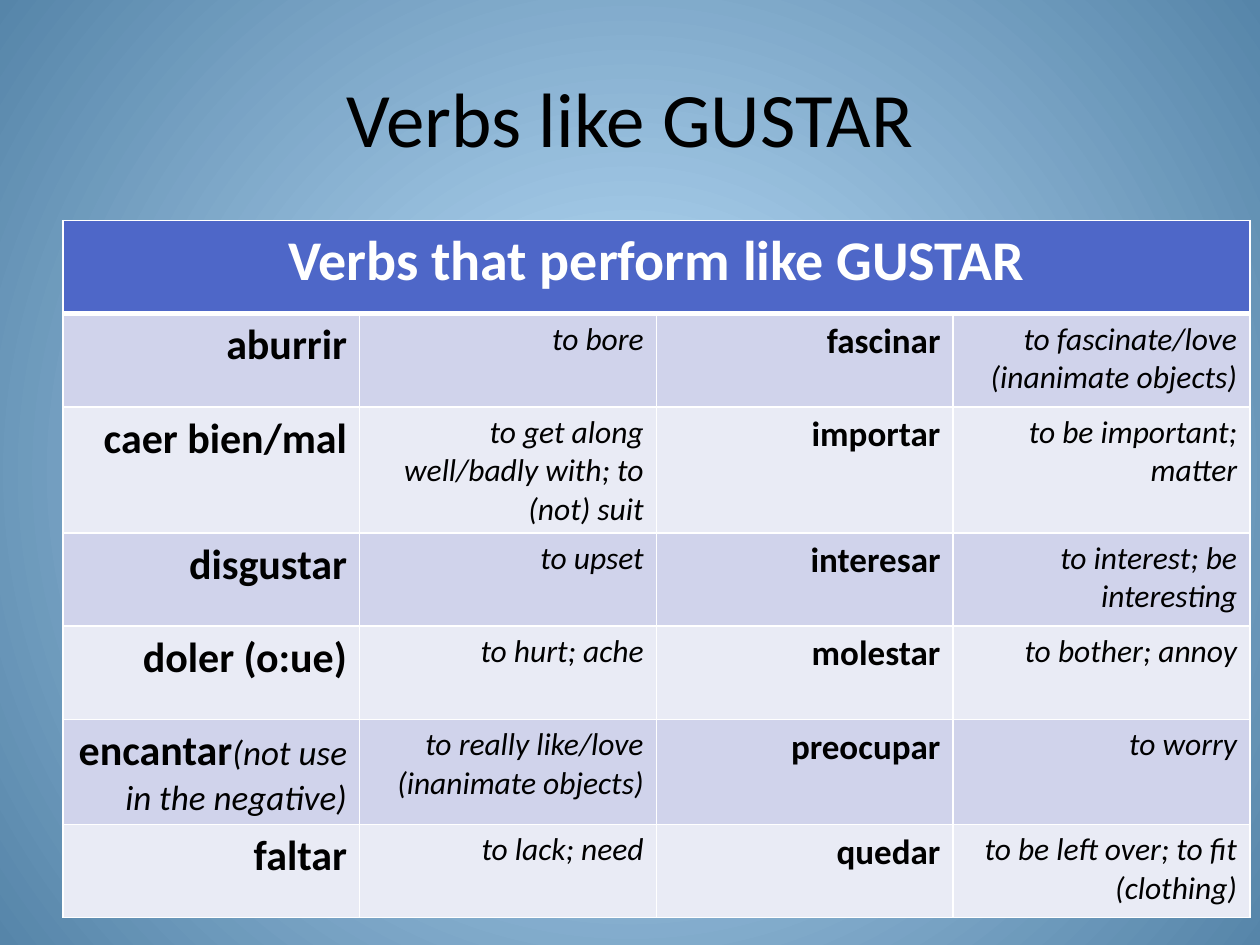
from dataclasses import dataclass

from lxml.etree import SubElement
from pptx import Presentation
from pptx.dml.color import RGBColor
from pptx.enum.text import MSO_ANCHOR, PP_ALIGN
from pptx.oxml import parse_xml
from pptx.oxml.ns import nsdecls, qn
from pptx.slide import Slide
from pptx.table import _Cell
from pptx.text.text import _Paragraph
from pptx.util import Inches, Pt


@dataclass(frozen=True)
class Theme:
    font: str = "Calibri"
    ink: str = "000000"
    white: str = "FFFFFF"
    glow: str = "C2E4FF"
    edge: str = "5685A9"
    header: str = "4E67C8"
    bands: tuple[str, str] = ("D0D3EB", "E9EBF5")
    title_size: int = 44
    header_size: int = 32
    left_verb_size: int = 24
    right_verb_size: int = 20
    note_size: int = 20
    meaning_size: int = 18
    thin: float = 1
    thick: float = 3


@dataclass(frozen=True)
class Verb:
    name: str
    meaning: str
    note: str = ""


THEME = Theme()

LEFT_VERBS = [
    Verb("aburrir", "to bore"),
    Verb("caer bien/mal", "to get along well/badly with; to (not) suit"),
    Verb("disgustar", "to upset"),
    Verb("doler (o:ue)", "to hurt; ache"),
    Verb("encantar", "to really like/love (inanimate objects)",
         "(not use in the negative)"),
    Verb("faltar", "to lack; need"),
]
RIGHT_VERBS = [
    Verb("fascinar", "to fascinate/love (inanimate objects)"),
    Verb("importar", "to be important; matter"),
    Verb("interesar", "to interest; be interesting"),
    Verb("molestar", "to bother; annoy"),
    Verb("preocupar", "to worry"),
    Verb("quedar", "to be left over; to fit (clothing)"),
]


def add_run(paragraph: _Paragraph, text: str, size: int, color: str = THEME.ink,
            bold: bool = False, italic: bool = False) -> None:
    run = paragraph.add_run()
    run.text = text
    run.font.name = THEME.font
    run.font.size = Pt(size)
    run.font.bold = bold
    run.font.italic = italic
    run.font.color.rgb = RGBColor.from_string(color)


def style_cell(cell: _Cell, fill: str, top: float = THEME.thin,
               bottom: float = THEME.thin) -> None:
    properties = cell._tc.get_or_add_tcPr()
    widths = {"lnL": THEME.thin, "lnR": THEME.thin, "lnT": top, "lnB": bottom}
    for side, width in widths.items():
        border = SubElement(properties, qn(f"a:{side}"), w=str(Pt(width)))
        solid = SubElement(border, qn("a:solidFill"))
        SubElement(solid, qn("a:srgbClr"), val=THEME.white)
    cell.fill.solid()
    cell.fill.fore_color.rgb = RGBColor.from_string(fill)


def fill_verb(name_cell: _Cell, meaning_cell: _Cell, verb: Verb, size: int) -> None:
    name = name_cell.text_frame.paragraphs[0]
    meaning = meaning_cell.text_frame.paragraphs[0]
    name.alignment = meaning.alignment = PP_ALIGN.RIGHT
    add_run(name, verb.name, size, bold=True)
    if verb.note:
        add_run(name, verb.note, THEME.note_size, italic=True)
    add_run(meaning, verb.meaning, THEME.meaning_size, italic=True)


def paint_background(slide: Slide) -> None:
    fill = slide.background.fill
    fill.gradient()
    for stop, color in zip(fill.gradient_stops, (THEME.glow, THEME.edge)):
        stop.color.rgb = RGBColor.from_string(color)
    # Turn the linear gradient into a circular one
    linear = next(slide.element.iter(qn("a:lin")))
    linear.getparent().replace(linear, parse_xml(
        f'<a:path {nsdecls("a")} path="circle">'
        '<a:fillToRect l="50000" t="50000" r="50000" b="50000"/></a:path>'))


def add_title(slide: Slide) -> None:
    title = slide.shapes.add_textbox(Inches(0.5), Inches(0.3), Inches(9), Inches(1.25))
    frame = title.text_frame
    frame.word_wrap = True
    frame.vertical_anchor = MSO_ANCHOR.MIDDLE
    heading = frame.paragraphs[0]
    heading.alignment = PP_ALIGN.CENTER
    add_run(heading, "Verbs like GUSTAR", THEME.title_size)


def add_verb_table(slide: Slide) -> None:
    row_count = len(LEFT_VERBS) + 1
    verbs = slide.shapes.add_table(
        row_count, 4, Inches(0.5), Inches(1.75),
        Inches(9.42), Inches(0.74 * row_count)).table

    # Header across all columns
    for cell in verbs.rows[0].cells:
        style_cell(cell, THEME.header, bottom=THEME.thick)
    header = verbs.cell(0, 0)
    header.merge(verbs.cell(0, 3))
    heading = header.text_frame.paragraphs[0]
    heading.alignment = PP_ALIGN.CENTER
    add_run(heading, "Verbs that perform like GUSTAR", THEME.header_size,
            THEME.white, bold=True)

    # Two verbs with their meanings in each banded row
    for row, (left, right) in enumerate(zip(LEFT_VERBS, RIGHT_VERBS), start=1):
        cells = list(verbs.rows[row].cells)
        for cell in cells:
            style_cell(cell, THEME.bands[(row - 1) % 2],
                       top=THEME.thick if row == 1 else THEME.thin)
        fill_verb(cells[0], cells[1], left, THEME.left_verb_size)
        fill_verb(cells[2], cells[3], right, THEME.right_verb_size)


def main() -> None:
    deck = Presentation()
    deck.slide_width, deck.slide_height = Inches(10), Inches(7.5)
    slide = deck.slides.add_slide(deck.slide_layouts[6])
    paint_background(slide)
    add_title(slide)
    add_verb_table(slide)
    deck.save("out.pptx")


if __name__ == "__main__":
    main()
